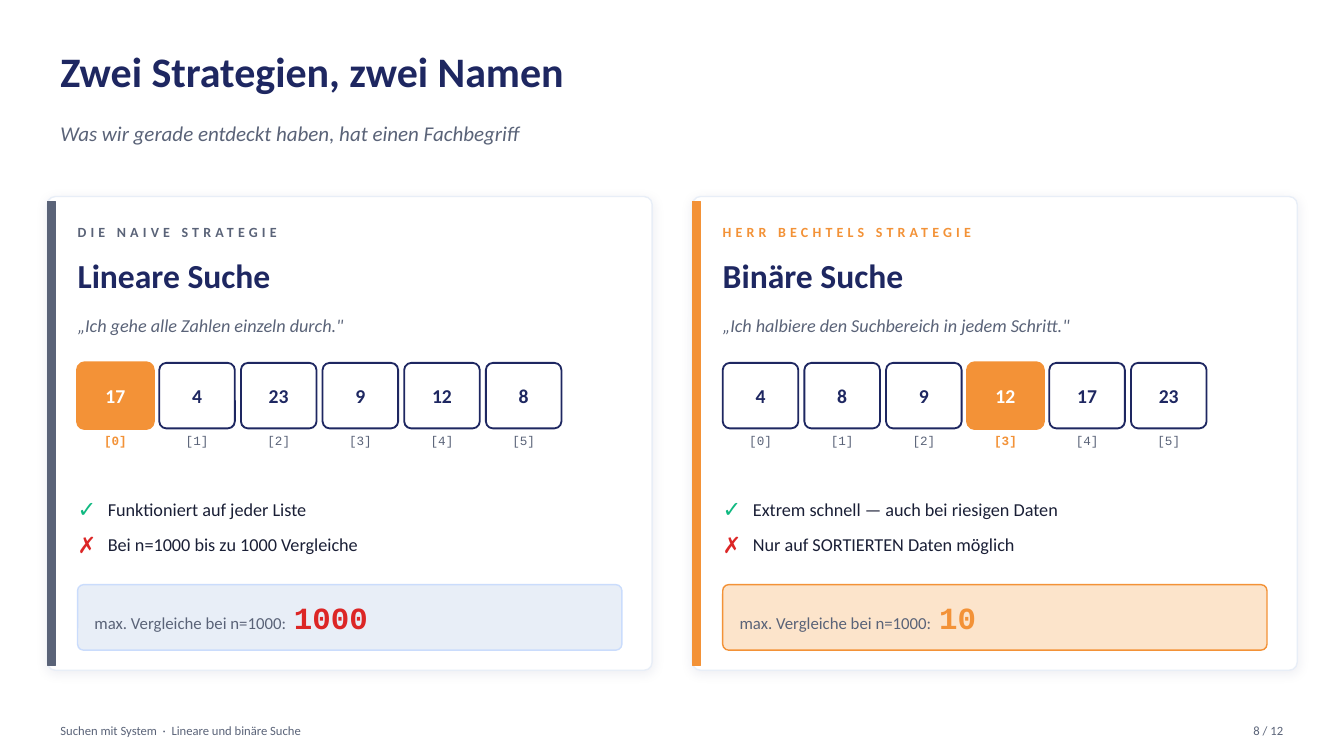
"""Builds a slide that compares linear and binary search."""
from lxml import etree
from pptx import Presentation
from pptx import util as u
from pptx.dml import color
from pptx.enum import shapes, text
from pptx.oxml import ns

COLORS = {
    "navy": "1E2761", "gray": "5A6378", "ink": "1A1F36", "white": "FFFFFF",
    "orange": "F39237", "peach": "FCE4CB", "mist": "E8EEF7", "sky": "CADCFC",
    "green": "10B981", "red": "DC2626",
}
HEADING = {"size": u.Pt(30), "bold": True}
SUBTITLE = {"size": u.Pt(15), "italic": True}
KICKER = {"size": u.Pt(10), "bold": True}
NAME = {"size": u.Pt(24), "bold": True}
BODY = {"size": u.Pt(13)}
QUOTE = {**BODY, "italic": True}
MARK = {"size": u.Pt(16), "bold": True}
VALUE = {"size": u.Pt(14), "bold": True}
INDEX = {"size": u.Pt(9), "name": "Courier New"}
RESULT = {"size": u.Pt(12)}
COUNT = {"size": u.Pt(22), "name": "Courier New", "bold": True}
FOOTER = {"size": u.Pt(9)}
LEFT, CENTER, RIGHT = text.PP_ALIGN.LEFT, text.PP_ALIGN.CENTER, text.PP_ALIGN.RIGHT
TOP, MIDDLE = text.MSO_ANCHOR.TOP, text.MSO_ANCHOR.MIDDLE

STRATEGIES = [
    {"kicker": "DIE NAIVE STRATEGIE", "name": "Lineare Suche", "accent": "gray",
     "quote": "„Ich gehe alle Zahlen einzeln durch.\"",
     "values": [17, 4, 23, 9, 12, 8], "active": 0,
     "pro": "Funktioniert auf jeder Liste",
     "contra": "Bei n=1000 bis zu 1000 Vergleiche",
     "count": "1000", "count_color": "red", "fill": "mist", "border": "sky"},
    {"kicker": "HERR BECHTELS STRATEGIE", "name": "Binäre Suche", "accent": "orange",
     "quote": "„Ich halbiere den Suchbereich in jedem Schritt.\"",
     "values": [4, 8, 9, 12, 17, 23], "active": 3,
     "pro": "Extrem schnell — auch bei riesigen Daten",
     "contra": "Nur auf SORTIERTEN Daten möglich",
     "count": "10", "count_color": "orange", "fill": "peach", "border": "orange"},
]


def rgb(key):
    """Return the named palette colour."""
    return color.RGBColor.from_string(COLORS[key])


def write(holder, runs, align=LEFT, anchor=MIDDLE, inset=0):
    """Fill a shape with runs of (wording, format, colour, letter spacing)."""
    frame = holder.text_frame
    settings = {"margin_left": u.Pt(inset), "margin_right": u.Pt(inset), "margin_top": 0,
                "margin_bottom": 0, "word_wrap": True, "vertical_anchor": anchor}
    for attribute, value in settings.items():
        setattr(frame, attribute, value)
    paragraph = frame.paragraphs[0]
    paragraph.alignment = align
    for wording, style, key, spacing in runs:
        run = paragraph.add_run()
        run.text = wording
        for attribute, value in {"name": "Calibri", **style}.items():
            setattr(run.font, attribute, value)
        run.font.color.rgb = rgb(key)
        if spacing:
            run._r.get_or_add_rPr().set("spc", str(round(spacing * 100)))


def add_label(slide, box, wording, style, key, align=LEFT, anchor=MIDDLE, spacing=0):
    """Place a one-run text box."""
    label = slide.shapes.add_textbox(*map(u.Pt, box))
    write(label, [(wording, style, key, spacing)], align, anchor)


def add_panel(slide, box, fill, border, width=1, radius=0):
    """Place a filled rectangle, rounded by a radius in points."""
    kind = shapes.MSO_SHAPE.ROUNDED_RECTANGLE if radius else shapes.MSO_SHAPE.RECTANGLE
    panel = slide.shapes.add_shape(kind, *map(u.Pt, box))
    panel.shadow.inherit = False
    if radius:
        panel.adjustments[0] = radius / min(box[2:])
    panel.fill.solid()
    panel.fill.fore_color.rgb = rgb(fill)
    panel.line.color.rgb = rgb(border)
    panel.line.width = u.Pt(width)
    return panel


def add_soft_shadow(panel):
    """Give a panel a faint shadow below it."""
    effects = panel._element.spPr.find(ns.qn("a:effectLst"))
    shadow = etree.SubElement(effects, ns.qn("a:outerShdw"), blurRad=str(u.Pt(8)),
                              dist=str(u.Pt(2)), dir="5400000", algn="bl", rotWithShape="0")
    tint = etree.SubElement(shadow, ns.qn("a:srgbClr"), val=COLORS["navy"])
    etree.SubElement(tint, ns.qn("a:alpha"), val="8000")


def add_array(slide, box, values, active):
    """Draw the list cells with their indexes, one cell highlighted."""
    left, top, width, height = box
    gap = 4.32
    cell_width = (width + gap) / len(values) - gap
    for index, value in enumerate(values):
        x = left + index * (cell_width + gap)
        hit = index == active
        fill, border, ink, line = (("orange", "orange", "white", 2.25) if hit
                                   else ("white", "navy", "navy", 1.3))
        cell = add_panel(slide, (x, top, cell_width, height), fill, border, line, 5.05)
        write(cell, [(str(value), VALUE, ink, 0)], CENTER)
        add_label(slide, (x, top + height + 2.88, cell_width, 21.6), f"[{index}]",
                  {**INDEX, "bold": hit}, "orange" if hit else "gray", CENTER, TOP)


def add_card(slide, box, strategy):
    """Draw one strategy card inside its box."""
    left, top, width, height = box
    accent = strategy["accent"]
    add_soft_shadow(add_panel(slide, box, "white", "mist", 1, 5.75))
    add_panel(slide, (left, top + 3.6, 5.76, height - 7.2), accent, accent)
    x = left + 21.6
    inner = width - 36
    add_label(slide, (x, top + 14.4, inner, 21.6), strategy["kicker"], KICKER, accent, spacing=3)
    add_label(slide, (x, top + 36, inner, 39.6), strategy["name"], NAME, "navy")
    add_label(slide, (x, top + 79.2, inner, 25.2), strategy["quote"], QUOTE, "gray")
    add_array(slide, (x, top + 118.8, 345.6, 46.8), strategy["values"], strategy["active"])
    marks = [("✓", "green", "pro"), ("✗", "red", "contra")]
    for row, (mark, key, point) in enumerate(marks):
        y = top + 212.4 + row * 25.2
        add_label(slide, (x, y, 21.6, 21.6), mark, MARK, key)
        add_label(slide, (x + 21.6, y, 367.2, 21.6), strategy[point], BODY, "ink")
    result = add_panel(slide, (x, top + 277.2, width - 43.2, 46.8),
                       strategy["fill"], strategy["border"], 1, 4.3)
    write(result, [("max. Vergleiche bei n=1000:", RESULT, "gray", 0),
                   (" ", RESULT, "gray", 2.7),
                   (strategy["count"], COUNT, strategy["count_color"], 0)], inset=10.8)


def add_header(slide, box):
    """Place the title and the subtitle."""
    left, top, width, height = box
    add_label(slide, (left, top, width, 54), "Zwei Strategien, zwei Namen",
              HEADING, "navy", anchor=TOP)
    add_label(slide, (left, top + 54, width, height - 54),
              "Was wir gerade entdeckt haben, hat einen Fachbegriff", SUBTITLE, "gray", anchor=TOP)


def add_footer(slide, box):
    """Place the deck name and the page number."""
    left, top, width, height = box
    deck = slide.shapes.add_textbox(*map(u.Pt, (left, top, 576, height)))
    write(deck, [("Suchen mit System", FOOTER, "gray", 0), (" ", FOOTER, "gray", 2),
                 ("·", FOOTER, "gray", 0), (" ", FOOTER, "gray", 2),
                 ("Lineare und binäre Suche", FOOTER, "gray", 0)])
    add_label(slide, (left + width - 57.6, top, 57.6, height), "8 / 12", FOOTER, "gray", RIGHT)


def main():
    """Build and save the presentation."""
    deck = Presentation()
    deck.slide_width, deck.slide_height = u.Pt(960), u.Pt(540)
    slide = deck.slides.add_slide(deck.slide_layouts[6])
    add_header(slide, (43.2, 32.4, 873.36, 82.8))
    for column, strategy in enumerate(STRATEGIES):
        add_card(slide, (33.84 + column * 460.8, 140.4, 432, 338.4), strategy)
    add_footer(slide, (43.2, 511.2, 873.36, 21.6))
    deck.save("out.pptx")


if __name__ == "__main__":
    main()
